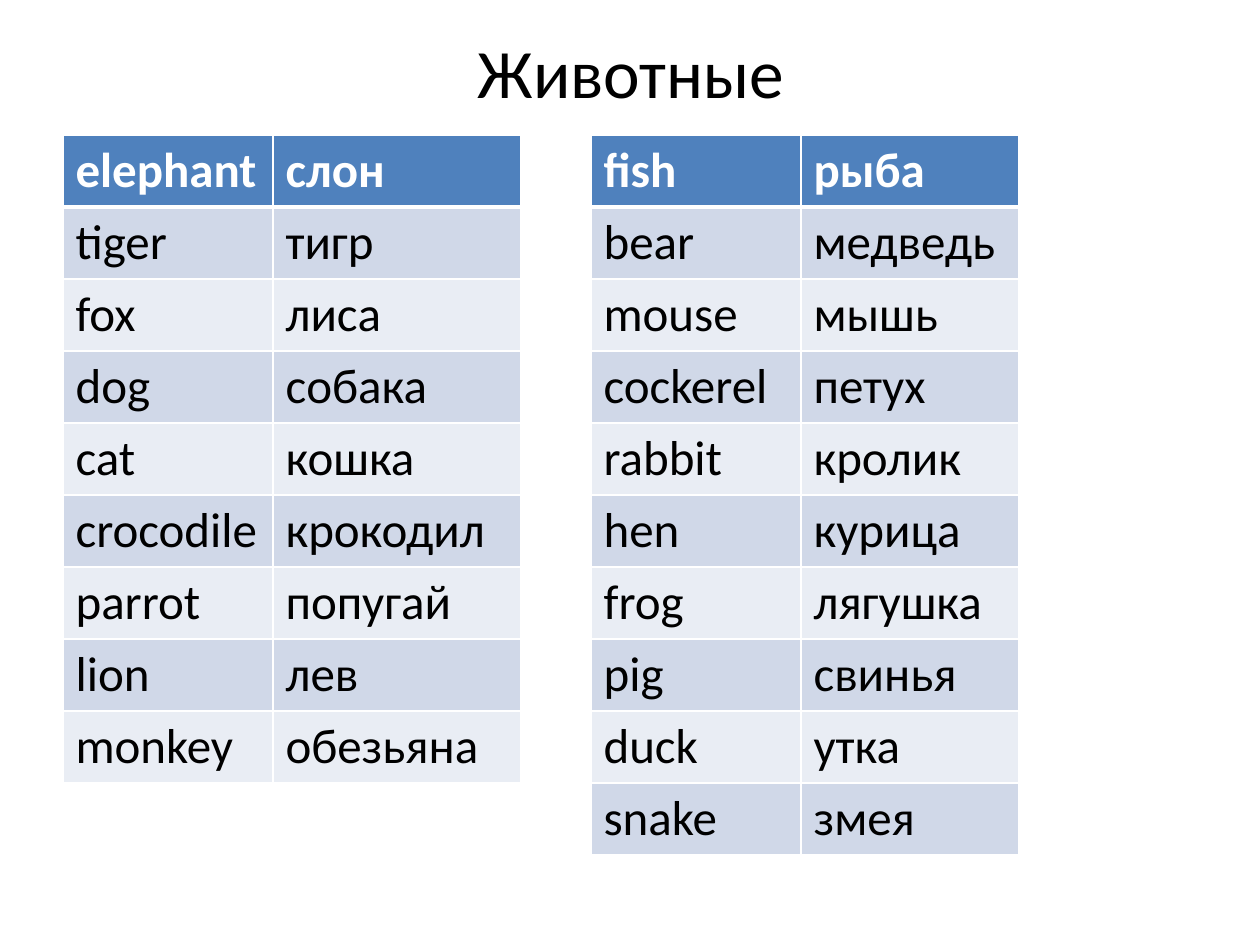
from dataclasses import dataclass

from lxml import etree
from pptx import Presentation
from pptx import util as u
from pptx.dml import color
from pptx.enum import text
from pptx.oxml import ns

SCALE = 914400 / 126


@dataclass(frozen=True)
class Theme:
    font: str = "Calibri"
    title: float = 39.6
    body: float = 28
    ink: str = "000000"
    white: str = "FFFFFF"
    head: str = "4F81BD"
    bands: tuple = ("E9EDF4", "D0D8E8")
    thin: float = 1
    thick: float = 3


def px(n):
    return u.Emu(round(n * SCALE))


def write(frame, words, font, size, ink, bold=False, align=text.PP_ALIGN.LEFT):
    para = frame.paragraphs[0]
    para.alignment = align
    run = para.add_run()
    run.text = words
    run.font.name = font
    run.font.size = u.Pt(size)
    run.font.bold = bold
    run.font.color.rgb = color.RGBColor.from_string(ink)


def edge(cell, side, width, ink):
    """Draw one border; call before the cell's fill is set, as the schema orders them."""
    props = cell._tc.get_or_add_tcPr()
    line = etree.SubElement(props, ns.qn(f"a:ln{side}"), w=str(u.Pt(width)))
    fill = etree.SubElement(line, ns.qn("a:solidFill"))
    etree.SubElement(fill, ns.qn("a:srgbClr"), val=ink)


class Page:
    def __init__(self, slide, theme):
        self.slide = slide
        self.theme = theme

    def title(self, words, x, y, w, h):
        frame = self.slide.shapes.add_textbox(px(x), px(y), px(w), px(h)).text_frame
        frame.word_wrap = True
        frame.vertical_anchor = text.MSO_ANCHOR.MIDDLE
        write(frame, words, self.theme.font, self.theme.title, self.theme.ink,
              align=text.PP_ALIGN.CENTER)

    def table(self, rows, x, y, widths, high):
        table = self.slide.shapes.add_table(
            len(rows), len(widths), px(x), px(y),
            px(sum(widths)), px(high * len(rows))).table
        for col, wide in zip(table.columns, widths):
            col.width = px(wide)
        for r, row in enumerate(rows):
            for c, word in enumerate(row):
                self.cell(table.cell(r, c), word, r)

    def cell(self, cell, word, row):
        theme = self.theme
        head = row == 0
        for side in "LRTB":
            heavy = (side == "B" and head) or (side == "T" and row == 1)
            edge(cell, side, theme.thick if heavy else theme.thin, theme.white)
        cell.fill.solid()
        shade = theme.head if head else theme.bands[row % 2]
        cell.fill.fore_color.rgb = color.RGBColor.from_string(shade)
        write(cell.text_frame, word, theme.font, theme.body,
              theme.white if head else theme.ink, bold=head)


LEFT = [
    ("elephant", "слон"), ("tiger", "тигр"), ("fox", "лиса"),
    ("dog", "собака"), ("cat", "кошка"), ("crocodile", "крокодил"),
    ("parrot", "попугай"), ("lion", "лев"), ("monkey", "обезьяна"),
]
RIGHT = [
    ("fish", "рыба"), ("bear", "медведь"), ("mouse", "мышь"),
    ("cockerel", "петух"), ("rabbit", "кролик"), ("hen", "курица"),
    ("frog", "лягушка"), ("pig", "свинья"), ("duck", "утка"),
    ("snake", "змея"),
]


def main():
    deck = Presentation()
    deck.slide_width, deck.slide_height = px(1260), px(945)
    page = Page(deck.slides.add_slide(deck.slide_layouts[6]), Theme())
    page.title("Животные", 64, 26, 1134, 90)
    top, high = 135, 72
    page.table(LEFT, 63, top, (210, 248), high)
    page.table(RIGHT, 591, top, (210, 218), high)
    deck.save("out.pptx")


if __name__ == "__main__":
    main()
